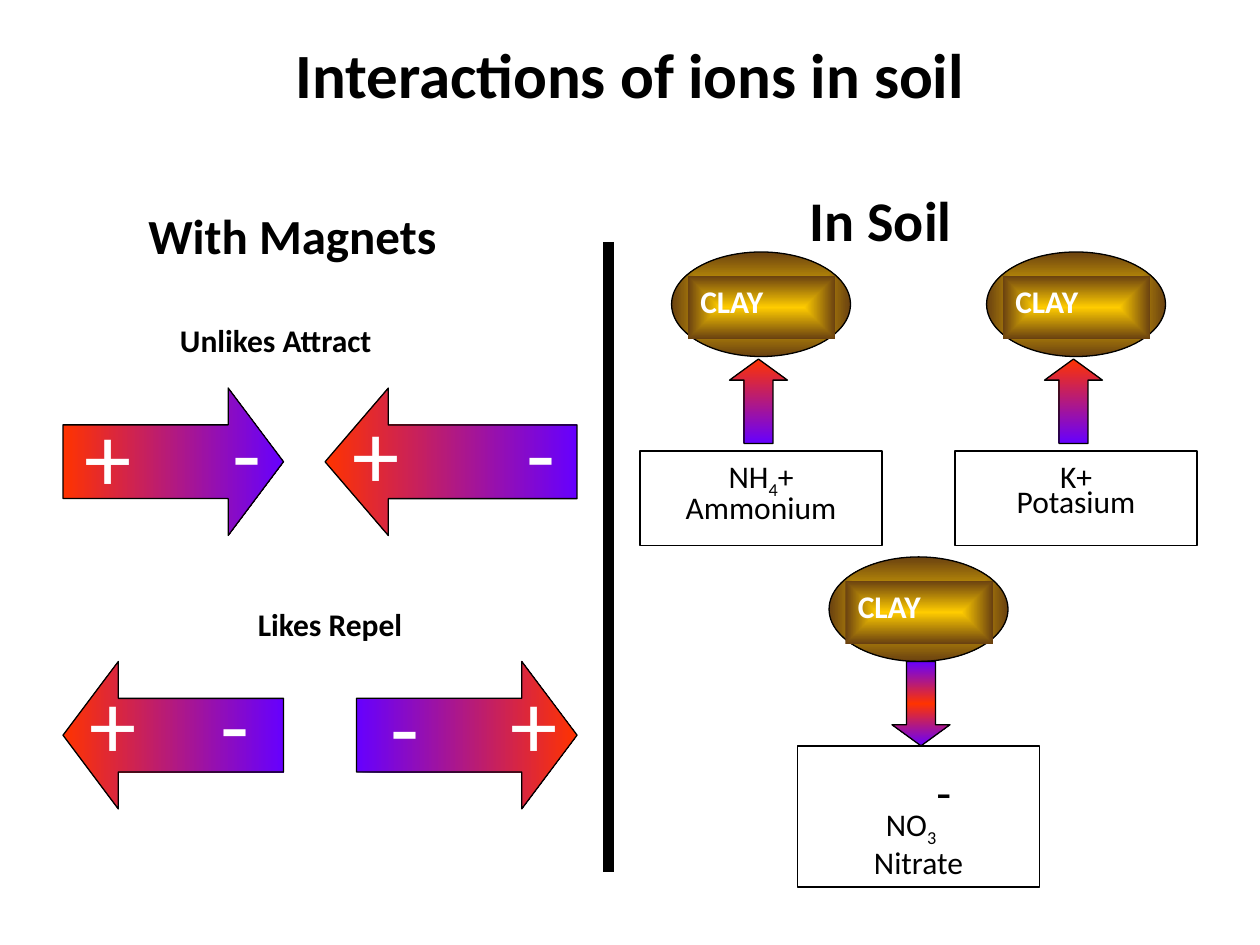
from lxml.etree import SubElement
from pptx import Presentation
from pptx.dml.color import RGBColor
from pptx.enum.shapes import MSO_CONNECTOR as Connector, MSO_SHAPE as Shape
from pptx.enum.text import MSO_ANCHOR as Anchor, PP_ALIGN as Align
from pptx.oxml import parse_xml
from pptx.oxml.ns import nsdecls, qn
from pptx.util import Inches, Pt

COLORS = {
    "black": "000000",
    "white": "FFFFFF",
    "plus": "FF3300",
    "minus": "6600FF",
    "gold": "FFCC00",
    "brown": "6A4110",
}
PLUS_TO_MINUS = ("plus", "minus")
MINUS_TO_PLUS = ("minus", "plus")
LINEAR = '<a:lin ang="{}" scaled="1"/>'
FROM_CENTER = '<a:path path="shape"><a:fillToRect l="50000" t="50000" r="50000" b="50000"/></a:path>'


class SlideBuilder:
    font_name = "Calibri"

    def __init__(self, slide):
        self.slide = slide
        self.shapes = slide.shapes

    def start_group(self):
        self.shapes = self.slide.shapes.add_group_shape().shapes

    def end_group(self):
        self.shapes = self.slide.shapes

    def color(self, name):
        return RGBColor.from_string(COLORS[name])

    def set_text(self, shape, paragraphs, size, color="black", bold=False,
                 align=Align.LEFT, anchor=Anchor.TOP, line_spacing=None):
        frame = shape.text_frame
        frame.word_wrap = True
        frame.vertical_anchor = anchor
        for index, runs in enumerate(paragraphs):
            paragraph = frame.add_paragraph() if index else frame.paragraphs[0]
            paragraph.alignment = align
            if index and line_spacing:
                paragraph.line_spacing = line_spacing
            paragraph.space_before = Pt(0)
            spacing = paragraph._p.pPr.find(qn("a:spcBef"))
            spacing.remove(spacing[0])
            SubElement(spacing, qn("a:spcPct")).set("val", "50000")
            font = paragraph.font
            font.name, font.size, font.bold = self.font_name, Pt(size), bold
            font.color.rgb = self.color(color)
            for text, baseline, run_size in runs:
                run = paragraph.add_run()
                run.text = text
                if run_size:
                    run.font.size = Pt(run_size)
                if baseline:
                    run._r.get_or_add_rPr().set("baseline", str(baseline * 1000))

    def label(self, text, left, top, width, height, size, rotation=0, **style):
        box = self.shapes.add_textbox(*map(Inches, (left, top, width, height)))
        box.rotation = rotation
        self.set_text(box, [[(text, 0, None)]], size, **style)

    def sign(self, text, left, top, width, rotation=0):
        self.label(text, left, top, width, 1, 54, rotation, color="white")

    def solid(self, kind, left, top, width, height, stops=(), direction="", outlined=True):
        shape = self.shapes.add_shape(kind, *map(Inches, (left, top, width, height)))
        shape.shadow.inherit = False
        shape.fill.background()
        if stops:
            marks = "".join(
                f'<a:gs pos="{index * 100000 // (len(stops) - 1)}">'
                f'<a:srgbClr val="{COLORS[name]}"/></a:gs>'
                for index, name in enumerate(stops))
            gradient = parse_xml(
                f'<a:gradFill {nsdecls("a")} rotWithShape="0">'
                f'<a:gsLst>{marks}</a:gsLst>{direction}</a:gradFill>')
            properties = shape._element.spPr
            properties.replace(properties.find(qn("a:noFill")), gradient)
        if outlined:
            shape.line.color.rgb = self.color("black")
            shape.line.width = Pt(0.75)
        else:
            shape.line.fill.background()
        return shape

    def magnet(self, left, top, width, stops, rotation=0, head=0.375):
        arrow = self.solid(Shape.RIGHT_ARROW, left, top, width, 1.17, stops, LINEAR.format(0))
        arrow.adjustments[1] = head
        arrow.rotation = rotation

    def clay(self, left, top):
        stops = ("gold", "brown")
        self.solid(Shape.OVAL, left, top, 1.42, 0.83, stops, FROM_CENTER)
        plate = self.solid(Shape.RECTANGLE, left + 0.13, top + 0.19, 1.17, 0.5,
                           stops, FROM_CENTER, outlined=False)
        self.set_text(plate, [[("CLAY", 0, None)]], 18, "white", bold=True)

    def force(self, left, top, stops, flipped=False):
        arrow = self.solid(Shape.UP_ARROW, left, top, 0.46, 0.67, stops, LINEAR.format(5400000))
        arrow.adjustments[1] = 0.364
        if flipped:
            arrow._element.spPr.xfrm.set("flipV", "1")

    def ion(self, left, top, height, formula, name, line_spacing):
        box = self.solid(Shape.RECTANGLE, left, top, 1.92, height)
        self.set_text(box, [formula, [(name, 0, None)]], 18, align=Align.CENTER,
                      line_spacing=line_spacing)

    def divider(self, x, top, bottom):
        line = self.shapes.add_connector(Connector.STRAIGHT, *map(Inches, (x, top, x, bottom)))
        line.line.color.rgb = self.color("black")
        line.line.width = Pt(6)
        SubElement(line._element.spPr, qn("a:effectLst"))


def main():
    presentation = Presentation()
    presentation.slide_width, presentation.slide_height = Inches(10), Inches(7.5)
    builder = SlideBuilder(presentation.slides.add_slide(presentation.slide_layouts[6]))

    builder.label("Interactions of ions in soil", 0.75, 0.08, 8.5, 1, 36, bold=True,
                  align=Align.CENTER, anchor=Anchor.MIDDLE)
    builder.label("With Magnets", 1.08, 1.58, 3.17, 0.57, 28, bold=True)
    builder.label("In Soil", 6.33, 1.42, 1.5, 0.63, 32, bold=True)
    builder.label("Unlikes Attract", 1.33, 2.5, 2.58, 0.5, 18, bold=True)
    builder.label("Likes Repel", 1.33, 4.75, 2.58, 0.5, 18, bold=True, align=Align.CENTER)

    builder.magnet(0.5, 3.08, 1.75, PLUS_TO_MINUS)
    builder.magnet(2.58, 3.08, 2, PLUS_TO_MINUS, 180, head=0.429)
    builder.magnet(0.5, 5.25, 1.75, PLUS_TO_MINUS, 180)
    builder.magnet(2.83, 5.25, 1.75, MINUS_TO_PLUS)
    for left, top, width in ((0.29, 3.23, 0.85), (2.42, 3.21, 0.85),
                             (0.33, 5.35, 0.85), (3.85, 5.35, 0.67)):
        builder.sign("+", left, top, width, 180)
    for left, top, width, rotation in ((1.75, 3.08, 0.58, 0), (4.08, 3.08, 0.58, 0),
                                       (0.91, 5.41, 1.17, 180), (3, 5.25, 1.17, 0)):
        builder.sign("-", left, top, width, rotation)

    ammonium = [("NH", 0, None), ("4", -25, None), ("+", 0, None)]
    potassium = [("K+", 0, None)]
    nitrate = [("NO", 0, None), ("3", -25, None), ("-", 30, 48)]
    for left, formula, name in ((5.33, ammonium, "Ammonium"), (7.83, potassium, "Potasium")):
        builder.start_group()
        builder.clay(left, 2)
        builder.force(left + 0.46, 2.85, PLUS_TO_MINUS)
        builder.ion(left - 0.25, 3.58, 0.75, formula, name, 0.1)
    builder.start_group()
    builder.clay(6.58, 4.42)
    builder.force(7.08, 5.25, ("minus", "plus", "minus"), flipped=True)
    builder.ion(6.33, 5.92, 1.12, nitrate, "Nitrate", 0.2)
    builder.end_group()

    builder.divider(4.83, 1.92, 6.92)
    presentation.save("out.pptx")


if __name__ == "__main__":
    main()
